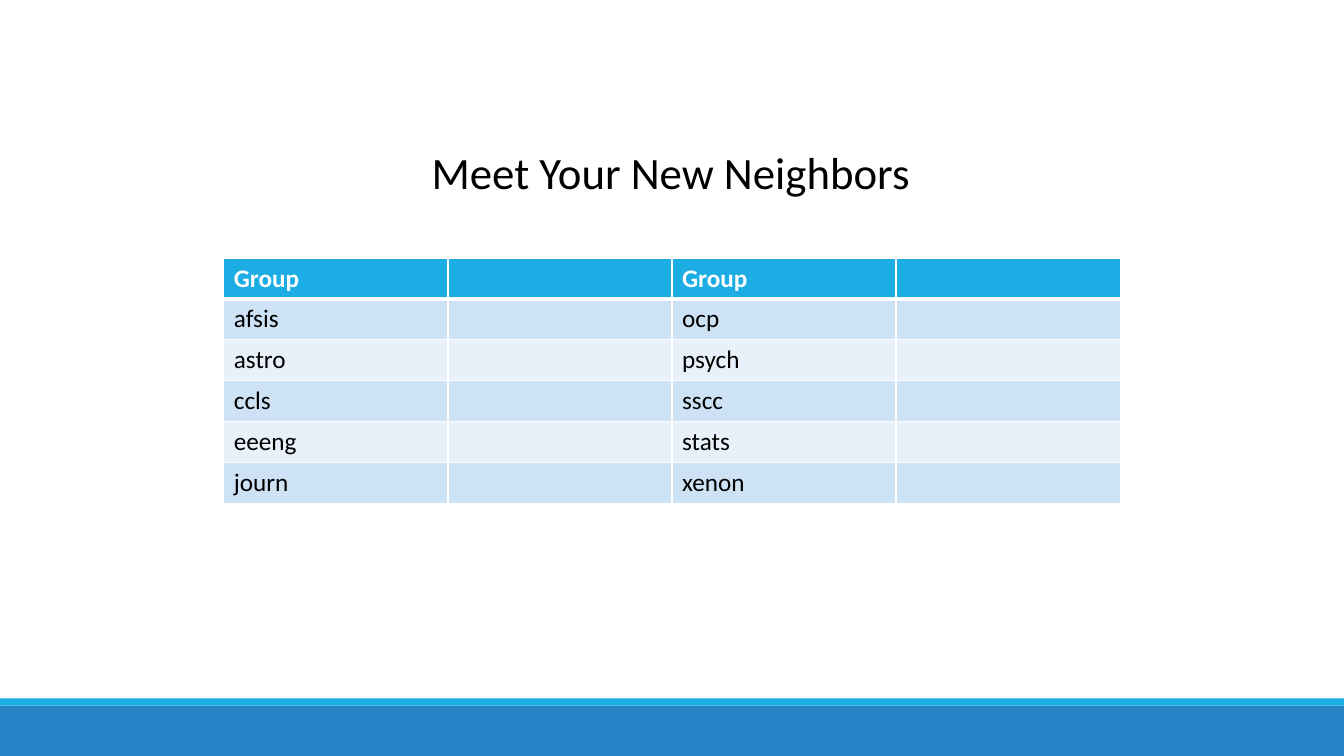
from lxml import etree
from pptx import Presentation
from pptx.dml.color import RGBColor
from pptx.enum.shapes import MSO_SHAPE
from pptx.enum.text import MSO_ANCHOR, PP_ALIGN
from pptx.oxml.ns import qn
from pptx.util import Inches, Pt

RECT = MSO_SHAPE.RECTANGLE
TOP = MSO_ANCHOR.TOP
LEFT, CENTER = PP_ALIGN.LEFT, PP_ALIGN.CENTER
TITLE_ONLY = 5
WIDTH, HEIGHT = 13.33, 7.5
FONT = "Calibri"
WHITE, BLACK = "FFFFFF", "000000"
CYAN, BLUE = "1CADE4", "2683C6"
BANDS = ("CDE3F5", "E8F1FA")

GROUPS = [
    ("Group", "", "Group", ""),
    ("afsis", "", "ocp", ""),
    ("astro", "", "psych", ""),
    ("ccls", "", "sscc", ""),
    ("eeeng", "", "stats", ""),
    ("journ", "", "xenon", ""),
]


def rgb(value):
    return RGBColor.from_string(value)


def add_text(tf, text, size, color, align, bold=False):
    p = tf.paragraphs[0]
    p.alignment = align
    r = p.add_run()
    r.text = text
    r.font.name = FONT
    r.font.size = Pt(size)
    r.font.bold = bold
    r.font.color.rgb = rgb(color)


def add_bar(s, x, y, w, h, color):
    bar = s.shapes.add_shape(RECT, Inches(x), Inches(y), Inches(w), Inches(h))
    bar.shadow.inherit = False
    bar.fill.solid()
    bar.fill.fore_color.rgb = rgb(color)
    bar.line.fill.background()


def add_footer(s, x, y, w, h):
    strip = 0.07
    add_bar(s, x, y + strip, w, h - strip, BLUE)
    add_bar(s, x, y, w, strip, CYAN)


def add_title(s, x, y, w, h, text):
    sp = s.shapes.title
    sp.left, sp.top, sp.width, sp.height = (Inches(v) for v in (x, y, w, h))
    tf = sp.text_frame
    tf.word_wrap = True
    tf.vertical_anchor = TOP
    add_text(tf, text, 32, BLACK, CENTER)


def set_borders(cell, bottom):
    # Borders come before the fill in the cell properties
    tcPr = cell._tc.get_or_add_tcPr()
    widths = (("a:lnL", 1), ("a:lnR", 1), ("a:lnT", 1), ("a:lnB", bottom))
    for i, (tag, width) in enumerate(widths):
        ln = etree.Element(qn(tag), w=str(Pt(width)))
        fill = etree.SubElement(ln, qn("a:solidFill"))
        etree.SubElement(fill, qn("a:srgbClr"), val=WHITE)
        tcPr.insert(i, ln)


def add_group_table(s, x, y, w, h, rows):
    frame = s.shapes.add_table(len(rows), len(rows[0]), Inches(x), Inches(y),
                               Inches(w), Inches(h))
    table = frame.table
    for i, row in enumerate(rows):
        header = i == 0
        for j, text in enumerate(row):
            cell = table.cell(i, j)
            cell.fill.solid()
            cell.fill.fore_color.rgb = rgb(CYAN if header else BANDS[(i - 1) % 2])
            # The rule under the header belongs to both rows
            set_borders(cell, 3 if header else 1)
            if i == 1:
                cell._tc.tcPr.find(qn("a:lnT")).set("w", str(Pt(3)))
            if text:
                add_text(cell.text_frame, text, 18, WHITE if header else BLACK,
                         LEFT, header)


def main():
    prs = Presentation()
    prs.slide_width, prs.slide_height = Inches(WIDTH), Inches(HEIGHT)
    s = prs.slides.add_slide(prs.slide_layouts[TITLE_ONLY])

    # Footer bars
    add_footer(s, 0, 6.93, WIDTH, 0.57)
    # Heading
    add_title(s, 0.18, 1.39, 12.95, 1.18, "Meet Your New Neighbors")
    # Neighbor groups
    add_group_table(s, 2.22, 2.56, 8.89, 2.43, GROUPS)

    prs.save("out.pptx")


if __name__ == "__main__":
    main()
